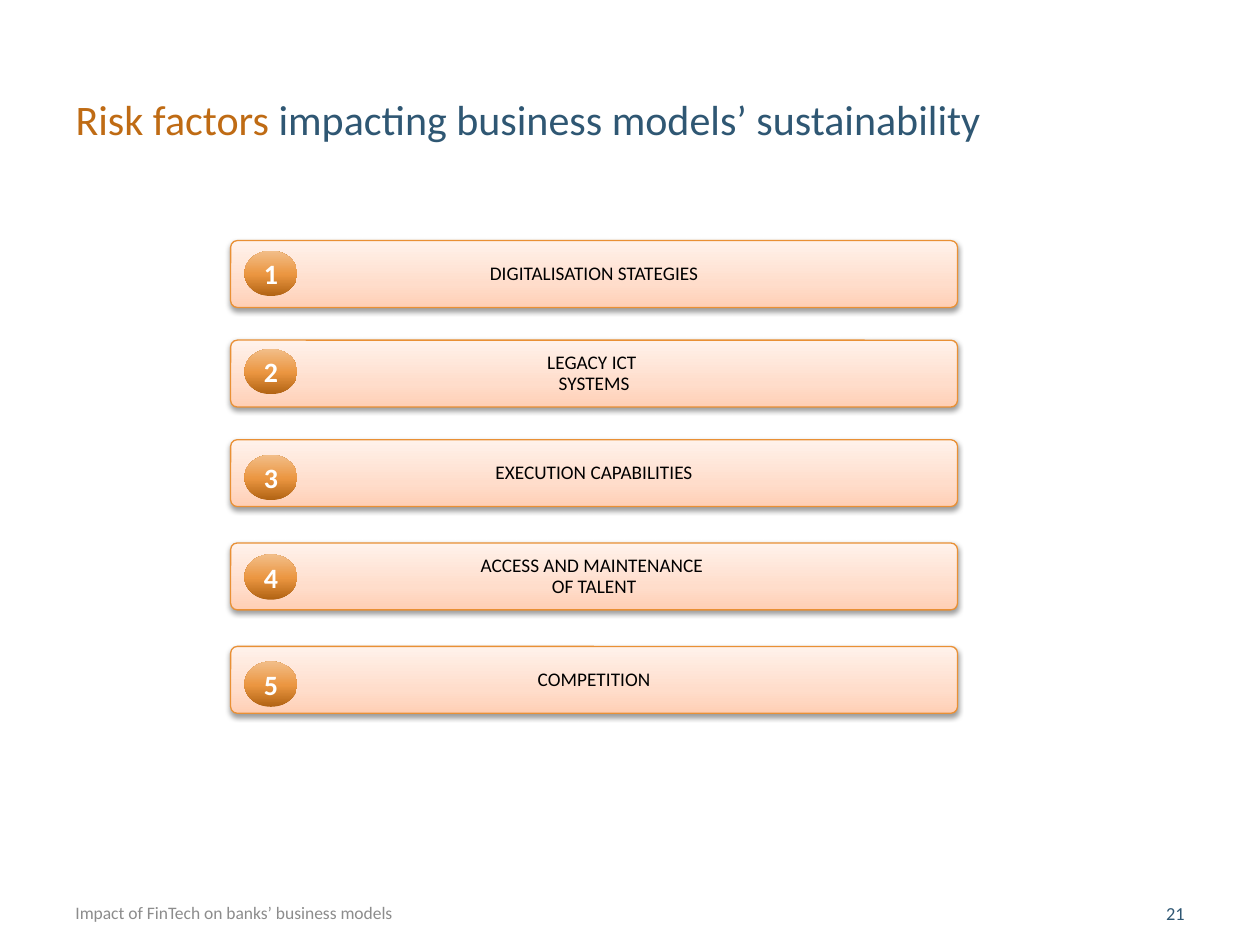
from lxml import etree
from pptx import Presentation
from pptx.dml.color import RGBColor
from pptx.enum import shapes, text
from pptx.oxml.ns import qn
from pptx.util import Pt

COLOURS = {
    "orange": "BF6B14", "blue": "2F5773", "grey": "8C8C8C",
    "black": "000000", "white": "FFFFFF", "outline": "E99035",
}
# Gradient stops run from the bottom edge to the top edge
BAR_STOPS = [(0, "FFCFB5"), (35, "FFDDCB"), (100, "FFF2EB")]
BADGE_STOPS = [(0, "B16313"), (48, "EB9641"), (100, "F2BE89")]

# Wording, top of the bar, top of its number badge
FACTORS = [
    ("DIGITALISATION STATEGIES", 137.5, 143.3),
    ("LEGACY ICT \nSYSTEMS", 194.4, 199.4),
    ("EXECUTION CAPABILITIES", 251.3, 259.9),
    ("ACCESS AND MAINTENANCE \nOF TALENT", 310.3, 316.8),
    ("COMPETITION", 369.4, 378),
]
BAR_LEFT, BAR_WIDTH, BAR_HEIGHT = 131.8, 415.4, 38.2
BADGE_LEFT, BADGE_WIDTH, BADGE_HEIGHT = 139.7, 30.2, 25.9


def add_span(para, wording, size, colour, bold=False):
    """Add formatted text; a newline becomes a line break."""
    for index, line in enumerate(wording.split("\n")):
        if index:
            para.add_line_break()
        span = para.add_run()
        span.text = line
        span.font.name = "Calibri"
        span.font.size = Pt(size)
        span.font.bold = bold
        span.font.color.rgb = RGBColor.from_string(COLOURS[colour])


def add_child(parent, tag, **attributes):
    values = {name: str(value) for name, value in attributes.items()}
    return etree.SubElement(parent, qn(tag), values)


class SlideBuilder:
    def __init__(self, page):
        self.page = page

    def title(self, left, top, width, height, parts):
        box = self.page.shapes.title
        box.left, box.top, box.width, box.height = map(Pt, (left, top, width, height))
        box.text_frame.vertical_anchor = text.MSO_ANCHOR.MIDDLE
        para = box.text_frame.paragraphs[0]
        para.alignment = text.PP_ALIGN.LEFT
        for wording, colour in parts:
            add_span(para, wording, 24, colour)

    def label(self, left, top, width, height, wording, size, colour,
              align=text.PP_ALIGN.LEFT):
        box = self.page.shapes.add_textbox(*map(Pt, (left, top, width, height)))
        box.text_frame.word_wrap = True
        para = box.text_frame.paragraphs[0]
        para.alignment = align
        add_span(para, wording, size, colour)

    def gradient_shape(self, kind, left, top, width, height, stops):
        box = self.page.shapes.add_shape(kind, *map(Pt, (left, top, width, height)))
        box.shadow.inherit = False
        box.fill.gradient()
        box.fill.gradient_angle = 90
        stop_list = box.element.spPr.find(".//" + qn("a:gsLst"))
        for old_stop in list(stop_list):
            stop_list.remove(old_stop)
        for position, colour in stops:
            stop = add_child(stop_list, "a:gs", pos=position * 1000)
            add_child(stop, "a:srgbClr", val=colour)
        box.text_frame.word_wrap = True
        box.text_frame.vertical_anchor = text.MSO_ANCHOR.MIDDLE
        box.text_frame.paragraphs[0].alignment = text.PP_ALIGN.CENTER
        return box

    def bar(self, top, wording):
        box = self.gradient_shape(shapes.MSO_SHAPE.ROUNDED_RECTANGLE, BAR_LEFT, top,
                                  BAR_WIDTH, BAR_HEIGHT, BAR_STOPS)
        box.adjustments[0] = 0.1
        box.line.color.rgb = RGBColor.from_string(COLOURS["outline"])
        box.line.width = Pt(0.75)
        # Soft shadow below the bar
        effects = box.element.spPr.find(qn("a:effectLst"))
        shadow = add_child(effects, "a:outerShdw", blurRad=Pt(3.1), dist=Pt(1.6),
                           dir=5400000, rotWithShape=0)
        shade = add_child(shadow, "a:srgbClr", val=COLOURS["black"])
        add_child(shade, "a:alpha", val=38000)
        para = box.text_frame.paragraphs[0]
        para.line_spacing = 0.9
        add_span(para, wording, 11, "black")

    def badge(self, top, number):
        box = self.gradient_shape(shapes.MSO_SHAPE.OVAL, BADGE_LEFT, top,
                                  BADGE_WIDTH, BADGE_HEIGHT, BADGE_STOPS)
        box.line.fill.background()
        frame = box.text_frame
        frame.margin_left = frame.margin_right = Pt(0)
        frame.margin_top = frame.margin_bottom = Pt(0)
        add_span(frame.paragraphs[0], str(number), 16, "white", bold=True)


def main():
    deck = Presentation()
    deck.slide_width, deck.slide_height = Pt(720), Pt(540)
    builder = SlideBuilder(deck.slides.add_slide(deck.slide_layouts[5]))

    # Title
    builder.title(36, 46, 574.6, 44, [
        ("Risk factors ", "orange"),
        ("impacting business models’ sustainability", "blue"),
    ])

    # Numbered risk factors
    for number, (wording, bar_top, badge_top) in enumerate(FACTORS, start=1):
        builder.bar(bar_top, wording)
        builder.badge(badge_top, number)

    # Footer and page number
    builder.label(36, 512, 387.4, 17.3,
                  "Impact of FinTech on banks’ business models", 10, "grey")
    builder.label(622.8, 512, 61.2, 17.3, "21", 10.5, "blue",
                  align=text.PP_ALIGN.RIGHT)

    deck.save("out.pptx")


if __name__ == "__main__":
    main()
